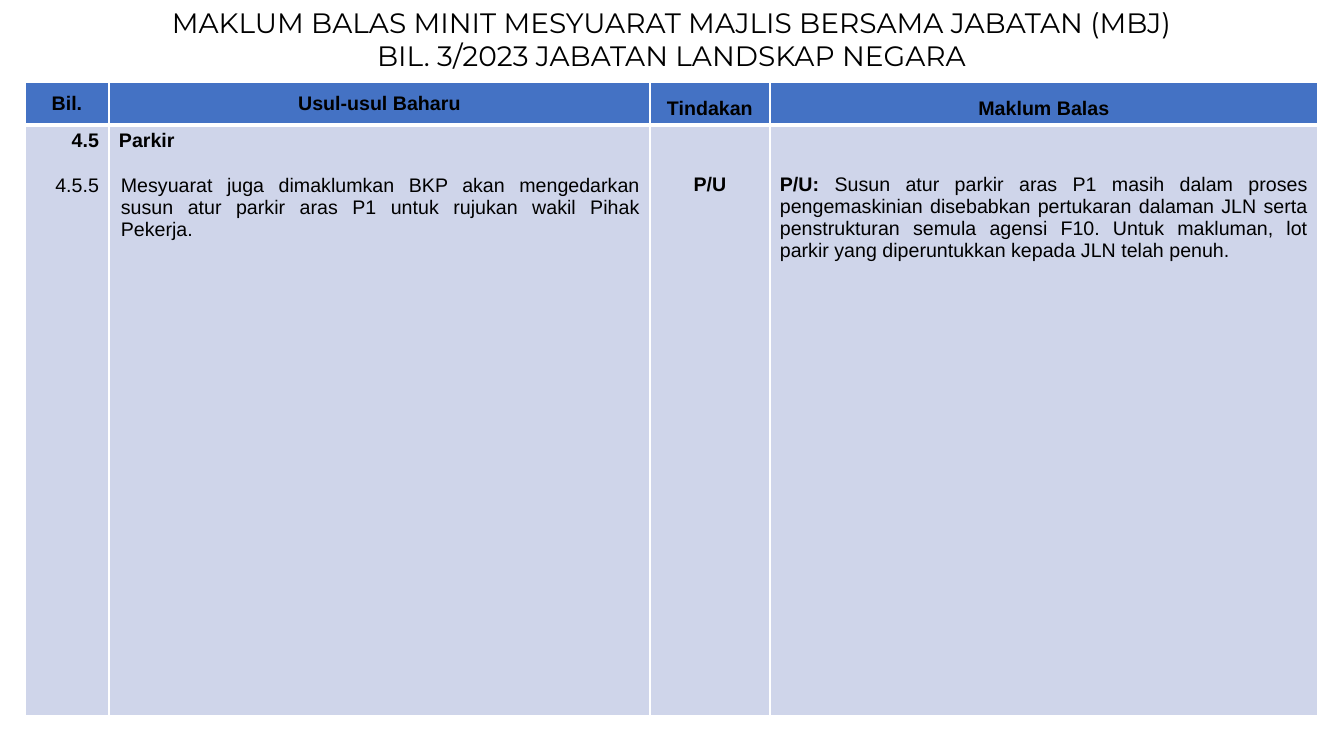
from lxml.etree import SubElement
from pptx import Presentation
from pptx.dml.color import RGBColor
from pptx.enum.text import MSO_ANCHOR as Anchor, MSO_AUTO_SIZE as AutoSize, PP_ALIGN as Align
from pptx.oxml.ns import qn
from pptx.util import Pt

EMU_PER_PX = 914400 / 100.8
BLACK, WHITE, BLUE, PALE = "000000", "FFFFFF", "4472C4", "CFD5EA"
BLANK_LINE = 44  # two text lines, in px

TITLE = [
    "MAKLUM BALAS MINIT MESYUARAT MAJLIS BERSAMA JABATAN (MBJ)",
    "BIL. 3/2023 JABATAN LANDSKAP NEGARA",
]
COLUMN_WIDTHS = [84, 541, 120, 548]
ROW_HEIGHTS = [43, 591]
HEADERS = [("Bil.", 1.0), ("Usul-usul Baharu", 1.0), ("Tindakan", 1.5), ("Maklum Balas", 1.5)]
PROPOSAL = (
    "Mesyuarat juga dimaklumkan BKP akan mengedarkan susun atur parkir aras P1 "
    "untuk rujukan wakil Pihak Pekerja."
)
REPLY = (
    "Susun atur parkir aras P1 masih dalam proses pengemaskinian disebabkan pertukaran "
    "dalaman JLN serta penstrukturan semula agensi F10. Untuk makluman, lot parkir yang "
    "diperuntukkan kepada JLN telah penuh."
)
# Each cell: alignment, extra top margin, paragraphs made of (text, bold) spans
BODY = [
    (Align.RIGHT, 0, [[("4.5", True)], [("4.5.5", False)]]),
    (Align.JUSTIFY, 0, [[("Parkir", True)], [(PROPOSAL, False)]]),
    (Align.CENTER, BLANK_LINE, [[("P/U", True)]]),
    (Align.JUSTIFY, BLANK_LINE, [[("P/U: ", True), (REPLY, False)]]),
]


def px(length):
    return round(length * EMU_PER_PX)


def rgb(color):
    return RGBColor.from_string(color)


def apply(target, formats):
    for name, value in formats.items():
        setattr(target, name, value)


def add_span(para, text, font, size, bold=False):
    span = para.add_run()
    span.text = text
    apply(span.font, {"name": font, "size": Pt(size), "bold": bold})
    span.font.color.rgb = rgb(BLACK)


def write_paragraphs(frame, paragraphs, font, size, formats):
    """Fill a text frame with paragraphs given as lists of (text, bold) spans."""
    for index, spans in enumerate(paragraphs):
        para = frame.add_paragraph() if index else frame.paragraphs[0]
        apply(para, formats)
        for text, bold in spans:
            add_span(para, text, font, size, bold)
    return frame.paragraphs


def add_borders(cell, bottom=1):
    properties = cell._tc.get_or_add_tcPr()
    for side, width in {"L": 1, "R": 1, "T": 1, "B": bottom}.items():
        line = SubElement(properties, qn(f"a:ln{side}"), w=str(Pt(width)))
        fill = SubElement(line, qn("a:solidFill"))
        SubElement(fill, qn("a:srgbClr"), val=WHITE)


def style_cell(cell, color, anchor, top=0, bottom_border=1):
    add_borders(cell, bottom_border)
    cell.fill.solid()
    cell.fill.fore_color.rgb = rgb(color)
    apply(cell, {
        "vertical_anchor": anchor,
        "margin_left": px(10), "margin_right": px(10),
        "margin_top": px(5 + top), "margin_bottom": px(5),
    })


def add_title(page):
    title = page.shapes.title
    apply(title, {"left": px(68), "top": px(0), "width": px(1207), "height": px(78)})
    frame = title.text_frame
    apply(frame, {"word_wrap": True, "auto_size": AutoSize.NONE, "vertical_anchor": Anchor.TOP})
    formats = {"alignment": Align.CENTER, "line_spacing": 1.0, "space_before": Pt(0)}
    write_paragraphs(frame, [[(line, False)] for line in TITLE], "Montserrat", 20, formats)


def add_minutes_table(page):
    table = page.shapes.add_table(
        len(ROW_HEIGHTS), len(COLUMN_WIDTHS), px(25), px(82),
        px(sum(COLUMN_WIDTHS)), px(sum(ROW_HEIGHTS)),
    ).table
    table.horz_banding = False
    for column, width in zip(table.columns, COLUMN_WIDTHS):
        column.width = px(width)
    for row, height in zip(table.rows, ROW_HEIGHTS):
        row.height = px(height)

    for cell, (text, spacing) in zip(table.rows[0].cells, HEADERS):
        style_cell(cell, BLUE, Anchor.MIDDLE, bottom_border=3)
        formats = {"alignment": Align.CENTER, "line_spacing": spacing}
        write_paragraphs(cell.text_frame, [[(text, True)]], "Arial", 14, formats)

    for cell, (alignment, top, paragraphs) in zip(table.rows[1].cells, BODY):
        style_cell(cell, PALE, Anchor.TOP, top)
        written = write_paragraphs(
            cell.text_frame, paragraphs, "Arial", 14, {"alignment": alignment})
        for para in written[1:]:
            para.space_before = Pt(16)
            if alignment == Align.JUSTIFY:
                para._p.get_or_add_pPr().set("marL", str(px(2)))


def main():
    deck = Presentation()
    apply(deck, {"slide_width": px(1344), "slide_height": px(756)})
    page = deck.slides.add_slide(deck.slide_layouts[5])
    add_minutes_table(page)
    add_title(page)
    deck.save("out.pptx")


if __name__ == "__main__":
    main()
